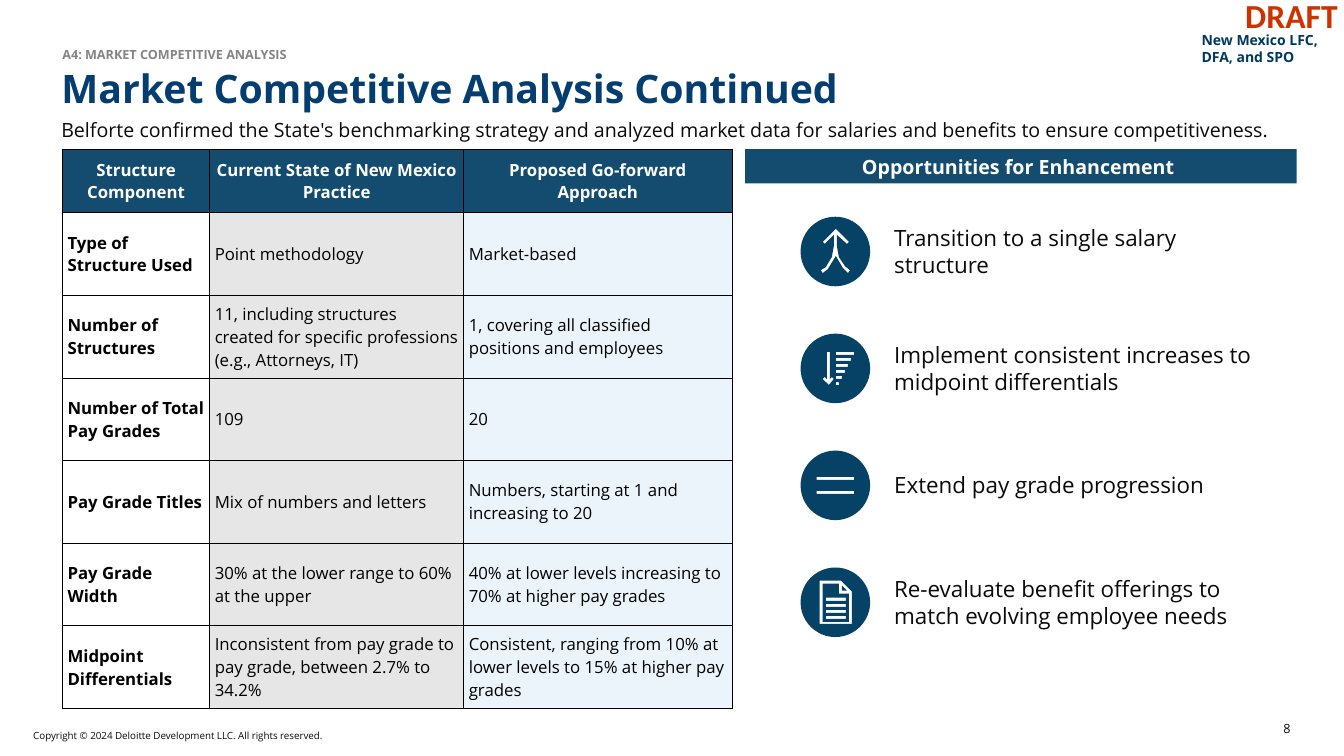
"""Build the market competitive analysis slide."""
import math
from dataclasses import dataclass
from typing import Any

from lxml import etree
from pptx import Presentation
from pptx import util as u
from pptx.dml.color import RGBColor
from pptx.enum import shapes, text
from pptx.oxml.ns import qn

Point = tuple[float, float]

WHITE = RGBColor(0xFF, 0xFF, 0xFF)
BLACK = RGBColor(0x00, 0x00, 0x00)
INK = RGBColor(0x0A, 0x0A, 0x0A)
GREY = RGBColor(0x84, 0x84, 0x84)
NAVY = RGBColor(0x04, 0x3D, 0x70)
CLIENT_BLUE = RGBColor(0x00, 0x39, 0x5D)
HEADER_BLUE = RGBColor(0x13, 0x4C, 0x6E)
ICON_BLUE = RGBColor(0x05, 0x42, 0x66)
CURRENT_GREY = RGBColor(0xE6, 0xE6, 0xE6)
PROPOSED_BLUE = RGBColor(0xD8, 0xEA, 0xF6)
DRAFT_RED = RGBColor(0xCC, 0x33, 0x00)

LEFT, CENTER, RIGHT = text.PP_ALIGN.LEFT, text.PP_ALIGN.CENTER, text.PP_ALIGN.RIGHT
TOP, MIDDLE, BOTTOM = text.MSO_ANCHOR.TOP, text.MSO_ANCHOR.MIDDLE, text.MSO_ANCHOR.BOTTOM


@dataclass(frozen=True)
class Label:
    content: str
    box: tuple[float, float, float, float]
    style: dict[str, Any]


@dataclass(frozen=True)
class Opportunity:
    content: str
    cutouts: list[list[Point]]


def bar_outline(left: float, top: float, width: float, height: float = 0.03) -> list[Point]:
    """Return the corners of a thin bar."""
    return [(left, top), (left + width, top), (left + width, top + height), (left, top + height)]


COLUMN_WIDTHS = (1.46, 2.52, 2.66)
HEADER_HEIGHT, ROW_HEIGHT = 0.63, 0.82
COLUMN_FILLS = (WHITE, CURRENT_GREY, PROPOSED_BLUE)
ROWS = (
    ("Structure Component", "Current State of New Mexico Practice", "Proposed Go-forward Approach"),
    ("Type of Structure Used", "Point methodology", "Market-based"),
    ("Number of Structures",
     "11, including structures created for specific professions (e.g., Attorneys, IT)",
     "1, covering all classified positions and employees"),
    ("Number of Total Pay Grades", "109", "20"),
    ("Pay Grade Titles", "Mix of numbers and letters", "Numbers, starting at 1 and increasing to 20"),
    ("Pay Grade Width", "30% at the lower range to 60% at the upper",
     "40% at lower levels increasing to 70% at higher pay grades"),
    ("Midpoint Differentials", "Inconsistent from pay grade to pay grade, between 2.7% to 34.2%",
     "Consistent, ranging from 10% at lower levels to 15% at higher pay grades"),
)

LABELS = (
    Label("Copyright © 2024 Deloitte Development LLC. All rights reserved.",
          (0.33, 7.24, 5.86, 0.15), dict(size=7, margins=(0, 0))),
    Label("8", (11.5, 6.85, 1.4, 0.5), dict(size=9, align=RIGHT, anchor=BOTTOM, spacing=0.9)),
    Label("New Mexico LFC, DFA, and SPO", (11.82, 0.22, 1.4, 0.52),
          dict(size=10, color=CLIENT_BLUE, bold=True, anchor=MIDDLE)),
    Label("Belforte confirmed the State's benchmarking strategy and analyzed market data "
          "for salaries and benefits to ensure competitiveness.",
          (0.51, 1.15, 12.44, 0.5), dict(size=14, spacing=0.9)),
    Label("A4: MARKET COMPETITIVE ANALYSIS", (0.52, 0.43, 3.08, 0.17),
          dict(size=9, color=GREY, bold=True, spacing=0.9)),
)

ICON_LEFT, ICON_TOP, ICON_RADIUS, ICON_PITCH = 7.94, 2.15, 0.345, 1.16
CIRCLE_STEPS = 48
MERGE = [[
    (0.35, 0.12), (0.48, 0.25), (0.46, 0.27), (0.36, 0.18), (0.36, 0.29), (0.38, 0.4),
    (0.44, 0.49), (0.49, 0.53), (0.47, 0.56), (0.42, 0.51), (0.35, 0.39), (0.27, 0.52),
    (0.22, 0.56), (0.2, 0.53), (0.25, 0.5), (0.31, 0.4), (0.33, 0.29), (0.33, 0.18),
    (0.24, 0.27), (0.22, 0.25),
]]
SORT = [
    [(0.26, 0.18), (0.29, 0.18), (0.29, 0.45), (0.31, 0.43), (0.33, 0.45), (0.28, 0.51),
     (0.22, 0.45), (0.24, 0.43), (0.26, 0.45)],
    *[bar_outline(0.35, 0.18 + 0.06 * i, 0.18 - 0.03 * i) for i in range(6)],
]
EQUALS = [bar_outline(0.16, y, 0.37) for y in (0.26, 0.4)]
DOCUMENT = [
    [(0.19, 0.13), (0.4, 0.13), (0.51, 0.24), (0.51, 0.56), (0.19, 0.56)],
    [(0.22, 0.16), (0.38, 0.16), (0.38, 0.26), (0.48, 0.26), (0.48, 0.54), (0.22, 0.54)],
    [(0.41, 0.18), (0.46, 0.23), (0.41, 0.23)],
    *[bar_outline(0.25, 0.3 + 0.06 * i, 0.2) for i in range(4)],
]
OPPORTUNITIES = (
    Opportunity("Transition to a single salary structure", MERGE),
    Opportunity("Implement consistent increases to midpoint differentials", SORT),
    Opportunity("Extend pay grade progression", EQUALS),
    Opportunity("Re-evaluate benefit offerings to match evolving employee needs", DOCUMENT),
)


def inches(*values: float) -> list[u.Length]:
    """Convert numbers to lengths."""
    return [u.Inches(v) for v in values]


def write(tf: Any, content: str, *, size: float, color: RGBColor = INK, bold: bool = False,
          font: str = "Open Sans", align: Any = LEFT, spacing: float = 1.0) -> None:
    """Write one formatted paragraph."""
    p = tf.paragraphs[0]
    p.alignment, p.line_spacing = align, spacing
    r = p.add_run()
    r.text = content
    r.font.name, r.font.size, r.font.bold = font, u.Pt(size), bold
    r.font.color.rgb = color


def fill_frame(sp: Any, content: str, *, anchor: Any = TOP,
               margins: tuple[float, float] = (0.1, 0.05), **style: Any) -> None:
    """Set up a shape's text frame and write in it."""
    tf = sp.text_frame
    tf.word_wrap, tf.auto_size, tf.vertical_anchor = True, text.MSO_AUTO_SIZE.NONE, anchor
    tf.margin_left = tf.margin_right = u.Inches(margins[0])
    tf.margin_top = tf.margin_bottom = u.Inches(margins[1])
    write(tf, content, **style)


def add_label(s: Any, label: Label) -> None:
    """Add a text box."""
    fill_frame(s.shapes.add_textbox(*inches(*label.box)), label.content, **label.style)


def paint(sp: Any, color: RGBColor) -> None:
    """Fill a shape and remove its outline and shadow."""
    sp.shadow.inherit = False
    sp.fill.solid()
    sp.fill.fore_color.rgb = color
    sp.line.fill.background()


def add_icon(s: Any, cutouts: list[list[Point]], top: float) -> None:
    """Add a disc with a symbol cut out of it."""
    angles = [math.tau * i / CIRCLE_STEPS for i in range(CIRCLE_STEPS)]
    disc = [(ICON_RADIUS * (1 + math.cos(a)), ICON_RADIUS * (1 + math.sin(a))) for a in angles]
    builder = None
    for outline in (disc, *cutouts):
        first, *rest = [tuple(inches(ICON_LEFT + x, top + y)) for x, y in outline]
        if builder is None:
            builder = s.shapes.build_freeform(*first, scale=1.0)
        else:
            builder.move_to(*first)
        builder.add_line_segments(rest, close=True)
    paint(builder.convert_to_shape(), ICON_BLUE)


def add_grid(s: Any, box: tuple[float, ...], rows: int, cols: int) -> Any:
    """Add a table without banding or header styling."""
    table = s.shapes.add_table(rows, cols, *inches(*box)).table
    table.first_row = table.horz_banding = False
    return table


def format_cell(cell: Any, fill: RGBColor) -> None:
    """Give a cell black borders, a fill and margins."""
    props = cell._tc.get_or_add_tcPr()
    for side in ("lnL", "lnR", "lnT", "lnB"):
        ln = etree.SubElement(props, qn(f"a:{side}"), w=str(u.Pt(0.5)))
        solid = etree.SubElement(ln, qn("a:solidFill"))
        etree.SubElement(solid, qn("a:srgbClr"), val=str(BLACK))
    cell.fill.solid()
    cell.fill.fore_color.rgb = fill
    if fill == PROPOSED_BLUE:
        color = props.find(f"{qn('a:solidFill')}/{qn('a:srgbClr')}")
        etree.SubElement(color, qn("a:alpha"), val="50000")
    cell.vertical_anchor = MIDDLE
    cell.margin_left = cell.margin_right = u.Inches(0.05)
    cell.margin_top = cell.margin_bottom = u.Inches(0.02)


def add_comparison(s: Any) -> None:
    """Add the table of current and proposed practice."""
    height = HEADER_HEIGHT + ROW_HEIGHT * (len(ROWS) - 1)
    table = add_grid(s, (0.62, 1.48, sum(COLUMN_WIDTHS), height), len(ROWS), len(COLUMN_WIDTHS))
    for column, width in zip(table.columns, COLUMN_WIDTHS):
        column.width = u.Inches(width)
    for i, row in enumerate(ROWS):
        header = i == 0
        table.rows[i].height = u.Inches(HEADER_HEIGHT if header else ROW_HEIGHT)
        for j, content in enumerate(row):
            cell = table.cell(i, j)
            format_cell(cell, HEADER_BLUE if header else COLUMN_FILLS[j])
            write(cell.text_frame, content, size=12, color=WHITE if header else BLACK,
                  bold=header or j == 0, align=CENTER if header else LEFT)


def add_draft_stamp(s: Any) -> None:
    """Add the draft mark in the corner."""
    cell = add_grid(s, (12.25, -0.03, 1.12, 0.42), 1, 1).cell(0, 0)
    cell.fill.background()
    cell.margin_top = cell.margin_bottom = 0
    write(cell.text_frame, "DRAFT", size=24, color=DRAFT_RED, bold=True, font="Calibri")


def main() -> None:
    """Build and save the slide."""
    prs = Presentation()
    prs.slide_width, prs.slide_height = inches(13.33, 7.5)
    s = prs.slides.add_slide(prs.slide_layouts[5])
    add_draft_stamp(s)
    title = s.shapes.title
    title.left, title.top, title.width, title.height = inches(0.51, 0.68, 12.33, 0.5)
    fill_frame(title, "Market Competitive Analysis Continued", size=28, color=NAVY, bold=True,
               spacing=0.8)
    for label in LABELS:
        add_label(s, label)
    add_comparison(s)
    bar = s.shapes.add_shape(shapes.MSO_SHAPE.RECTANGLE, *inches(7.39, 1.48, 5.47, 0.34))
    paint(bar, HEADER_BLUE)
    fill_frame(bar, "Opportunities for Enhancement ", size=14, color=WHITE, bold=True,
               align=CENTER, anchor=MIDDLE)
    for i, item in enumerate(OPPORTUNITIES):
        top = ICON_TOP + ICON_PITCH * i
        add_icon(s, item.cutouts, top)
        add_label(s, Label(item.content, (8.77, top + 0.02, 3.85, 0.64),
                           dict(size=16, anchor=MIDDLE)))
    prs.save("out.pptx")


if __name__ == "__main__":
    main()
